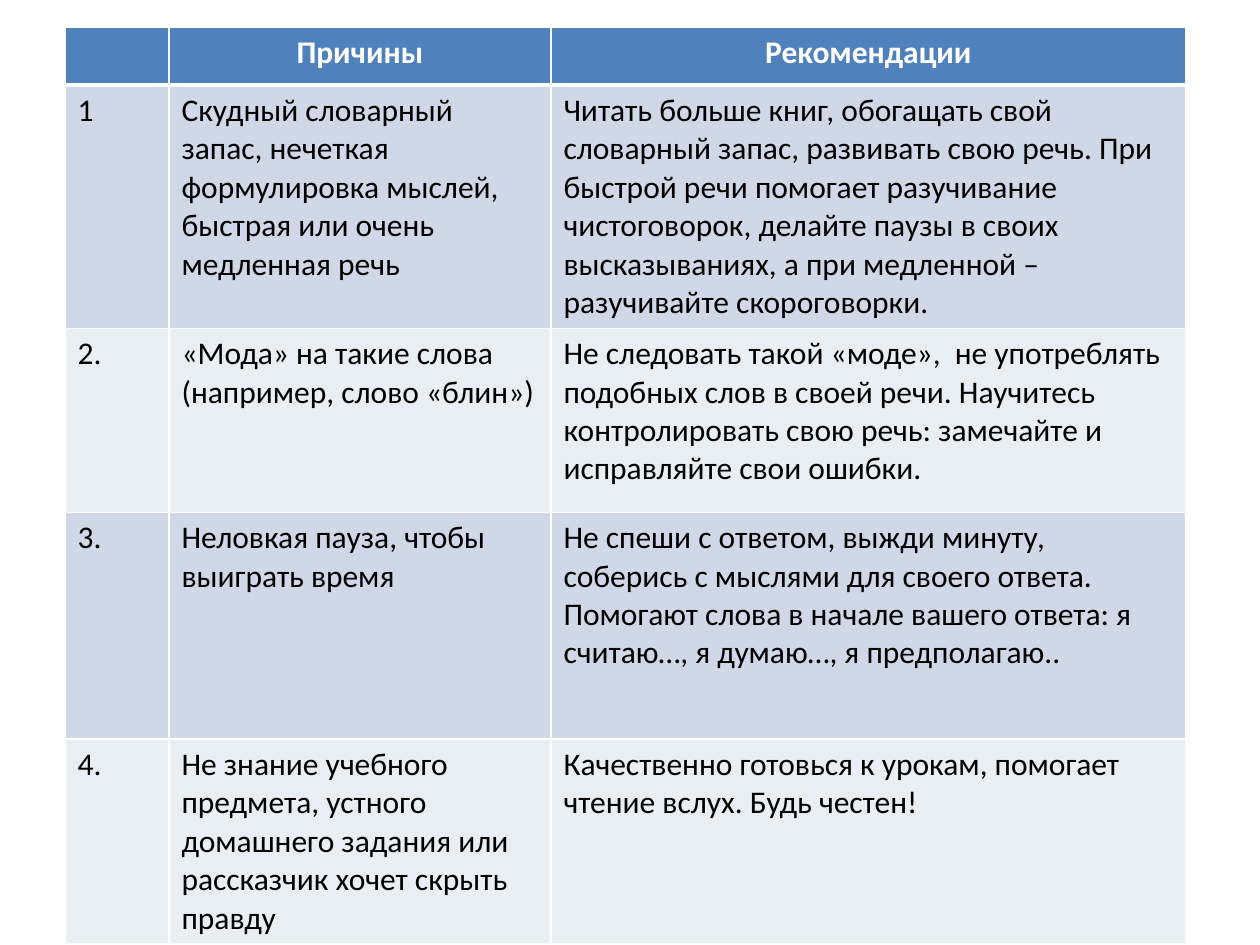
"""Builds a slide with a table of speech problems and recommendations."""
import pptx
import pptx.dml.color
import pptx.enum.text
import pptx.oxml
import pptx.oxml.ns
import pptx.util

PX = 914400 // 126
COLORS = {"header": "4F81BD", "odd": "D0D8E8", "even": "E9EDF4",
          "white": "FFFFFF", "text": "000000"}
COLUMN_WIDTHS = [104, 382, 635]
ROW_HEIGHTS = [58, 184, 184, 227, 102]
FRAME_HEIGHT = 910
ROWS = [
    ("", "Причины", "Рекомендации"),
    ("1",
     "Скудный словарный запас, нечеткая формулировка мыслей, быстрая или очень "
     "медленная речь",
     "Читать больше книг, обогащать свой словарный запас, развивать свою речь. "
     "При быстрой речи помогает разучивание чистоговорок, делайте паузы в своих "
     "высказываниях, а при медленной – разучивайте скороговорки."),
    ("2.",
     "«Мода» на такие слова\n(например, слово «блин»)",
     "Не следовать такой «моде»,  не употреблять подобных слов в своей речи. "
     "Научитесь контролировать свою речь: замечайте и исправляйте свои ошибки."),
    ("3.",
     "Неловкая пауза, чтобы выиграть время",
     "Не спеши с ответом, выжди минуту, соберись с мыслями для своего ответа. "
     "Помогают слова в начале вашего ответа: я считаю…, я думаю…, я предполагаю.."),
    ("4.",
     "Не знание учебного предмета, устного домашнего задания или рассказчик хочет "
     "скрыть правду",
     "Качественно готовься к урокам, помогает чтение вслух. Будь честен!"),
]


def px(length):
    return pptx.util.Emu(length * PX)


def rgb(name):
    return pptx.dml.color.RGBColor.from_string(COLORS[name])


def set_borders(cell, widths):
    properties = cell._tc.get_or_add_tcPr()
    for index, (side, points) in enumerate(widths.items()):
        line = pptx.oxml.parse_xml(
            f'<a:ln{side} {pptx.oxml.ns.nsdecls("a")} w="{pptx.util.Pt(points)}">'
            f'<a:solidFill><a:srgbClr val="{COLORS["white"]}"/></a:solidFill>'
            f'</a:ln{side}>')
        properties.insert(index, line)


def fill_cell(cell, text, row_index):
    is_header = row_index == 0
    cell.text_frame.text = text
    cell.fill.solid()
    cell.fill.fore_color.rgb = rgb(
        "header" if is_header else "odd" if row_index % 2 else "even")
    set_borders(cell, {"L": 1, "R": 1, "T": 3 if row_index == 1 else 1,
                       "B": 3 if is_header else 1})
    for para in cell.text_frame.paragraphs:
        if is_header:
            para.alignment = pptx.enum.text.PP_ALIGN.CENTER
        for span in para.runs:
            span.font.name = "Calibri"
            span.font.size = pptx.util.Pt(18)
            span.font.bold = is_header
            span.font.color.rgb = rgb("white" if is_header else "text")


def add_advice_table(page):
    frame = page.shapes.add_table(
        len(ROWS), len(COLUMN_WIDTHS), px(65), px(27),
        px(sum(COLUMN_WIDTHS)), px(FRAME_HEIGHT))
    table = frame.table
    for column, width in zip(table.columns, COLUMN_WIDTHS):
        column.width = px(width)
    for row, height in zip(table.rows, ROW_HEIGHTS):
        row.height = px(height)
    frame.height = px(FRAME_HEIGHT)
    for row_index, texts in enumerate(ROWS):
        for column_index, text in enumerate(texts):
            fill_cell(table.cell(row_index, column_index), text, row_index)


def main():
    deck = pptx.Presentation()
    deck.slide_width = pptx.util.Inches(10)
    deck.slide_height = pptx.util.Inches(7.5)
    page = deck.slides.add_slide(deck.slide_layouts[6])
    add_advice_table(page)
    deck.save("out.pptx")


if __name__ == "__main__":
    main()
